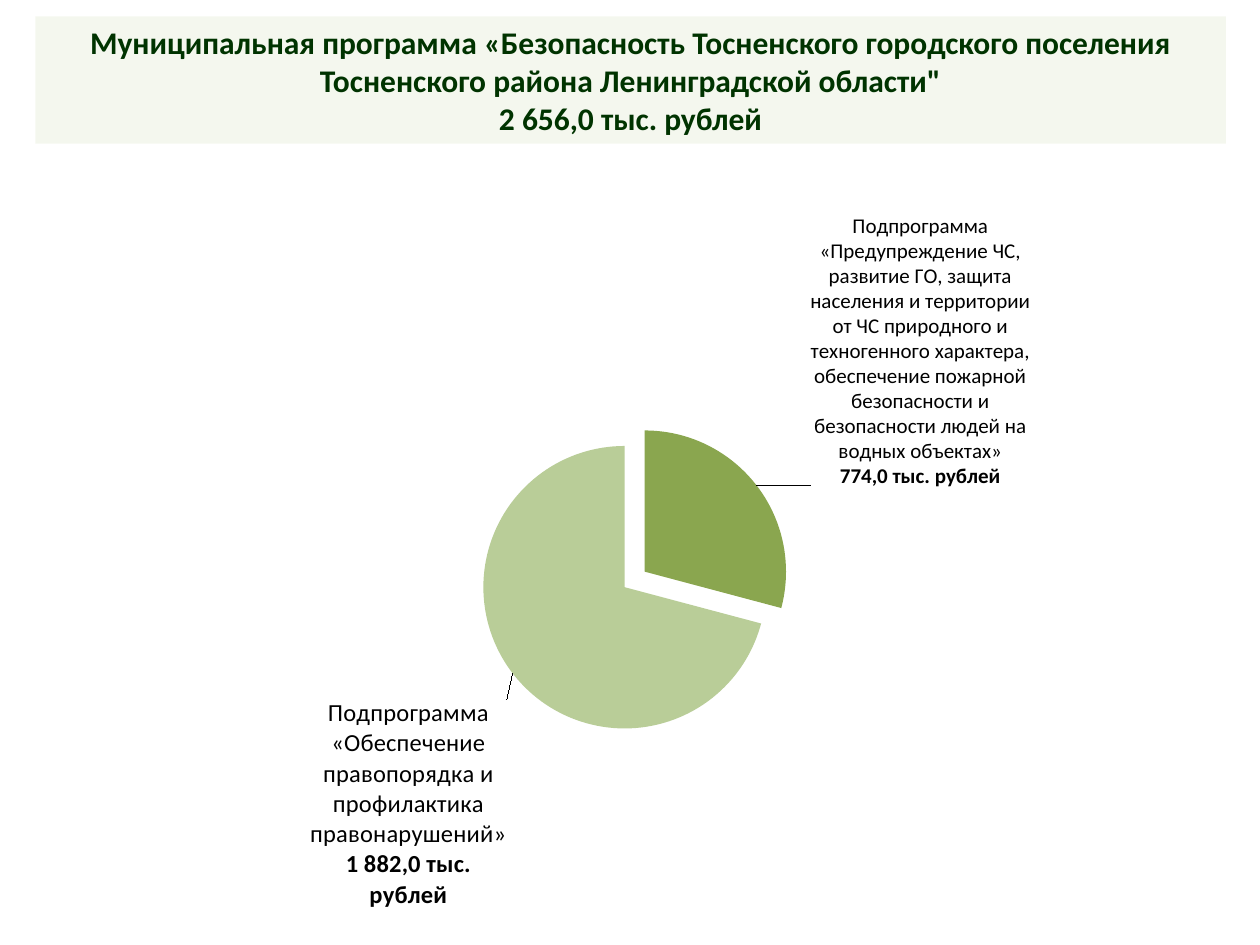
from lxml import etree
from pptx import Presentation
from pptx.chart.data import CategoryChartData
from pptx.dml.color import RGBColor
from pptx.enum.chart import XL_CHART_TYPE, XL_LABEL_POSITION
from pptx.enum.shapes import MSO_SHAPE
from pptx.enum.text import MSO_ANCHOR, MSO_AUTO_SIZE, PP_ALIGN
from pptx.oxml import parse_xml
from pptx.oxml.ns import qn
from pptx.util import Inches, Pt

PIE = XL_CHART_TYPE.PIE
OUTSIDE = XL_LABEL_POSITION.OUTSIDE_END
RECTANGLE = MSO_SHAPE.RECTANGLE
MIDDLE = MSO_ANCHOR.MIDDLE
GROW = MSO_AUTO_SIZE.SHAPE_TO_FIT_TEXT
CENTER = PP_ALIGN.CENTER

FONT = "Calibri"
LEFT, WIDTH = 0.28, 9.45
CHART_NS = "http://schemas.openxmlformats.org/drawingml/2006/chart"
CHART15_NS = "http://schemas.microsoft.com/office/drawing/2012/chart"

TITLE = [
    "Муниципальная программа «Безопасность Тосненского городского поселения "
    "Тосненского района Ленинградской области\"",
    "2 656,0 тыс. рублей",
]

# offset and extent are fractions of the chart's width and height
SUBPROGRAMS = [
    {
        "category": "Подпрограмма \"Предупреждение ЧС, развитие ГО, защита "
                    "населения и территории от ЧС природного и техногенного "
                    "характера, обеспечение пожарной безопасности и "
                    "безопасности людей на водных объектах\" 774,0 тыс. рублей",
        "name": "Подпрограмма «Предупреждение ЧС, развитие ГО, защита населения "
                "и территории от ЧС природного и техногенного характера, "
                "обеспечение пожарной безопасности и безопасности людей "
                "на водных объектах»",
        "amount": ["774,0 тыс. рублей"],
        "value": 774, "color": "8AA64F", "size": 12, "explosion": 18,
        "offset": (0.04, 0.01), "extent": (0.19, 0.38),
    },
    {
        "category": "Подпрограмма \"Обеспечение провопорядка и профилактика "
                    "правонарушений\" 1 882,0 тыс. рублей",
        "name": "Подпрограмма «Обеспечение правопорядка и профилактика "
                "правонарушений»",
        "amount": ["1 882,0 тыс.", "рублей"],
        "value": 1882, "color": "B9CD98", "size": 14, "explosion": 0,
        "offset": (0, 0.03), "extent": (0.17, 0.3),
    },
]


def rgb(value):
    return RGBColor.from_string(value)


def style_font(font, color, **values):
    for name, value in {"name": FONT, **values}.items():
        setattr(font, name, value)
    font.color.rgb = rgb(color)


def manual_layout(**values):
    """Return a c:layout element with the given c:manualLayout settings."""
    settings = "".join(f'<c:{tag} val="{val}"/>' for tag, val in values.items())
    return parse_xml(f'<c:layout xmlns:c="{CHART_NS}"><c:manualLayout>'
                     f"{settings}</c:manualLayout></c:layout>")


def add_title(slide):
    banner = slide.shapes.add_shape(
        RECTANGLE, Inches(LEFT), Inches(0.13), Inches(WIDTH), Inches(1.01))
    banner.shadow.inherit = False
    banner.line.fill.background()
    banner.fill.solid()
    banner.fill.fore_color.rgb = rgb("EBF1DE")
    color = banner.fill._xPr.find(".//" + qn("a:srgbClr"))
    etree.SubElement(color, qn("a:alpha")).set("val", "51000")

    frame = banner.text_frame
    for name, value in {"word_wrap": True, "auto_size": GROW,
                        "vertical_anchor": MIDDLE}.items():
        setattr(frame, name, value)
    frame.text = "\n".join(TITLE)
    for paragraph in frame.paragraphs:
        paragraph.alignment = CENTER
        style_font(paragraph.runs[0].font, "003300", size=Pt(18), bold=True)


def format_slice(point, subprogram):
    fill = point.format.fill
    fill.solid()
    fill.fore_color.rgb = rgb(subprogram["color"])
    data_point = point._ser.findall(qn("c:dPt"))[-1]
    explosion = etree.Element(qn("c:explosion"))
    explosion.set("val", str(subprogram["explosion"]))
    data_point.find(qn("c:idx")).addnext(explosion)


def label_slice(point, subprogram):
    label = point.data_label
    frame = label.text_frame
    frame.text = "\n".join([subprogram["name"], *subprogram["amount"]])
    for index, paragraph in enumerate(frame.paragraphs):
        paragraph.alignment = CENTER
        style_font(paragraph.runs[0].font, "000000",
                   size=Pt(subprogram["size"]), bold=index > 0)
    label.position = OUTSIDE

    element = frame._txBody.getparent().getparent()
    element.find(qn("c:showCatName")).set("val", "1")
    x, y = subprogram["offset"]
    element.find(qn("c:idx")).addnext(manual_layout(x=x, y=y))
    w, h = subprogram["extent"]
    element.append(parse_xml(
        f'<c:extLst xmlns:c="{CHART_NS}" xmlns:c15="{CHART15_NS}">'
        '<c:ext uri="{CE6537A1-D6FC-4f65-9D91-7224C49458BB}"><c15:layout>'
        f'<c:manualLayout><c:w val="{w}"/><c:h val="{h}"/></c:manualLayout>'
        "</c15:layout></c:ext></c:extLst>"))


def add_pie(slide):
    data = CategoryChartData(number_format="#,##0.0")
    data.categories = [subprogram["category"] for subprogram in SUBPROGRAMS]
    data.add_series("Series 1", [subprogram["value"] for subprogram in SUBPROGRAMS])
    chart = slide.shapes.add_chart(
        PIE, Inches(LEFT), Inches(1.47), Inches(WIDTH), Inches(5.75), data).chart
    chart.has_legend = False
    chart.has_title = False
    style_font(chart.font, "000000", size=Pt(18))

    plot = chart.plots[0]
    plot.vary_by_categories = True
    series = plot.series[0]
    labels = series.data_labels
    for name in ("show_value", "show_category_name"):
        setattr(labels, name, True)
    style_font(labels.font, "000000", size=Pt(14))
    for index, subprogram in enumerate(SUBPROGRAMS):
        point = series.points[index]
        format_slice(point, subprogram)
        label_slice(point, subprogram)

    plot_area = chart._chartSpace.find(".//" + qn("c:plotArea"))
    for layout in plot_area.findall(qn("c:layout")):
        plot_area.remove(layout)
    plot_area.insert(0, manual_layout(
        layoutTarget="inner", xMode="edge", yMode="edge",
        x=0.37, y=0.36, w=0.25, h=0.39))


def main():
    presentation = Presentation()
    presentation.slide_width = Inches(10)
    presentation.slide_height = Inches(7.5)
    slide = presentation.slides.add_slide(presentation.slide_layouts[6])
    add_title(slide)
    add_pie(slide)
    presentation.save("out.pptx")


if __name__ == "__main__":
    main()
